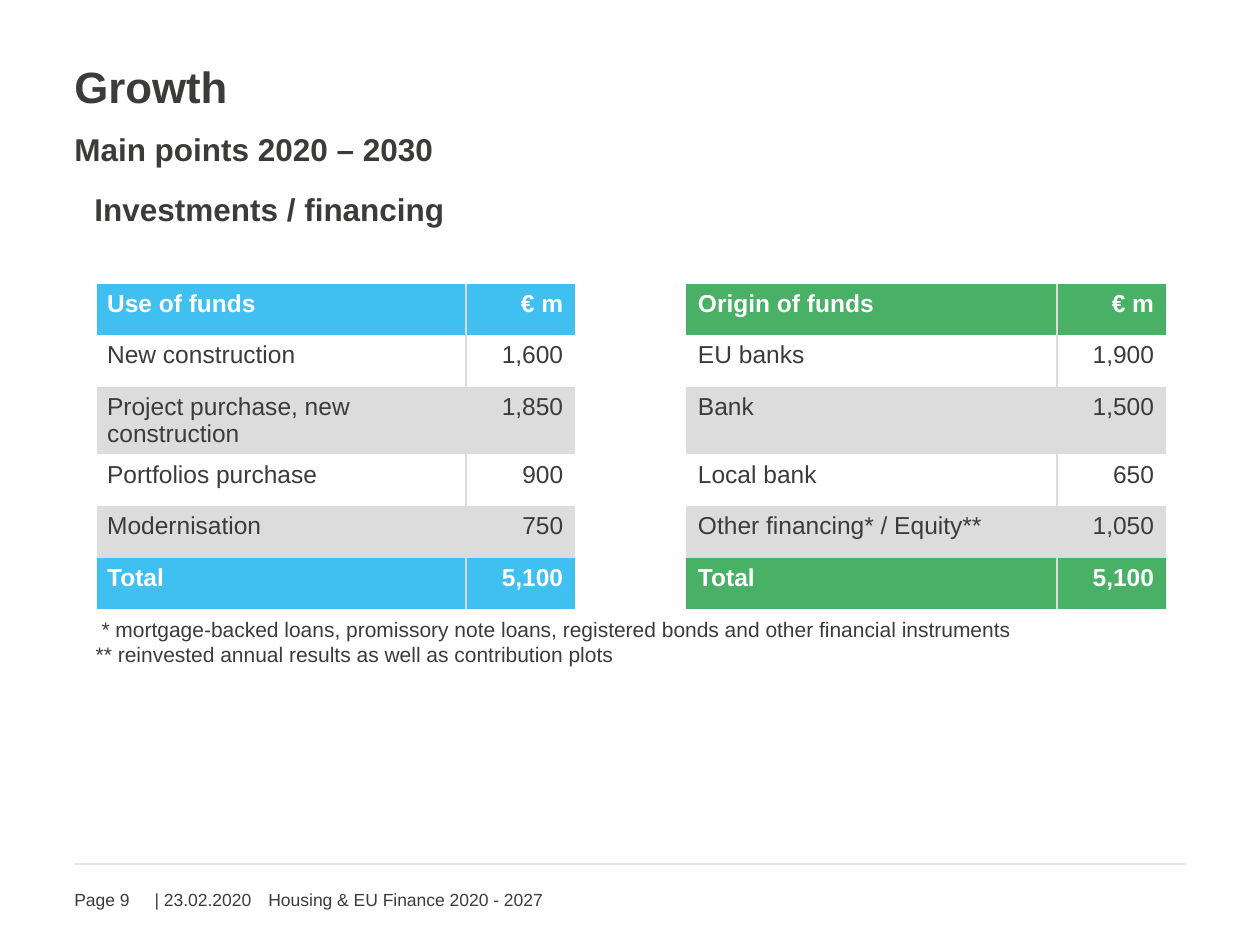
from lxml.etree import SubElement
from pptx import Presentation
from pptx.dml.color import RGBColor
from pptx.enum.shapes import MSO_CONNECTOR
from pptx.enum.text import MSO_ANCHOR, MSO_AUTO_SIZE, PP_ALIGN
from pptx.oxml.ns import qn
from pptx.util import Inches, Pt

COLORS = {
    "text": "3B3B3A",
    "white": "FFFFFF",
    "band": "DCDCDC",
    "rule": "E6E6E6",
    "use": "3FC0F0",
    "origin": "49B165",
}
FONT = "Arial"

TITLE = "Growth"
SUBTITLE = "Main points 2020 – 2030"
SECTION = "Investments / financing"
FUNDS = [
    ("Use of funds", "€ m", "", "Origin of funds", "€ m"),
    ("New construction", "1,600", "", "EU banks", "1,900"),
    ("Project purchase, new construction", "1,850", "", "Bank", "1,500"),
    ("Portfolios purchase", "900", "", "Local bank", "650"),
    ("Modernisation", "750", "", "Other financing* / Equity**", "1,050"),
    ("Total", "5,100", "", "Total", "5,100"),
]
FOOTNOTES = [
    " * mortgage-backed loans, promissory note loans, registered bonds and other financial instruments",
    "** reinvested annual results as well as contribution plots",
]
PAGE_LABEL = "Page 9"
DATE = "| 23.02.2020"
EVENT = "Housing & EU Finance 2020 - 2027"

MARGIN = 0.59
FOOTER_TOP, FOOTER_HEIGHT = 6.98, 0.24
COLUMN_WIDTHS = [2.95, 0.87, 0.87, 2.95, 0.87]
COLUMN_COLORS = ["use", "use", None, "origin", "origin"]
AMOUNT_COLUMNS = (1, 4)
GAP_COLUMN = 2
ROW_HEIGHT = 0.41


def color(name):
    return RGBColor.from_string(COLORS[name])


def write(frame, lines, size, bold=False, tint="text", align=PP_ALIGN.LEFT):
    frame.text = "\n".join(lines)
    for para in frame.paragraphs:
        para.alignment = align
        para.font.size = Pt(size)
        for span in para.runs:
            span.font.name = FONT
            span.font.size = Pt(size)
            span.font.bold = bold
            span.font.color.rgb = color(tint)


def set_frame(frame, left=0, top=0, anchor=MSO_ANCHOR.TOP):
    frame.word_wrap = True
    frame.auto_size = MSO_AUTO_SIZE.NONE
    frame.vertical_anchor = anchor
    frame.margin_left, frame.margin_top = Inches(left), Inches(top)
    frame.margin_right = frame.margin_bottom = 0


def add_text(page, place, lines, size, bold=False):
    box = page.shapes.add_textbox(*map(Inches, place))
    set_frame(box.text_frame, top=0.04)
    write(box.text_frame, lines, size, bold)


def add_footer(page, left, width, text, inset=0, align=PP_ALIGN.LEFT):
    place = (left, FOOTER_TOP, width, FOOTER_HEIGHT)
    box = page.shapes.add_textbox(*map(Inches, place))
    set_frame(box.text_frame, left=inset, anchor=MSO_ANCHOR.BOTTOM)
    write(box.text_frame, [text], 10, align=align)


def set_borders(cell, borders):
    properties = cell._tc.get_or_add_tcPr()
    for position, side in enumerate(("L", "R", "T", "B")):
        line = properties.makeelement(qn(f"a:ln{side}"), {})
        properties.insert(position, line)
        if side in borders:
            name, width = borders[side]
            line.set("w", str(Pt(width)))
            fill = SubElement(line, qn("a:solidFill"))
            SubElement(fill, qn("a:srgbClr"), val=COLORS[name])
        else:
            line.set("w", "0")
            SubElement(line, qn("a:noFill"))


def cell_borders(column):
    if column in AMOUNT_COLUMNS:
        return {"L": ("band", 1), "R": ("white", 1)}
    left = ("white", 3 if column == 0 else 1)
    return {"L": left, "R": ("white" if column == GAP_COLUMN else "band", 1)}


def add_funds_table(page):
    count = len(FUNDS)
    frame = page.shapes.add_table(
        count, len(COLUMN_WIDTHS), Inches(0.75), Inches(2.25),
        Inches(sum(COLUMN_WIDTHS)), Inches(count * ROW_HEIGHT),
    )
    table = frame.table
    table.first_row = table.horz_banding = False
    for column, width in zip(table.columns, COLUMN_WIDTHS):
        column.width = Inches(width)
    for row, values in enumerate(FUNDS):
        table.rows[row].height = Inches(ROW_HEIGHT)
        strong = row in (0, count - 1)
        for column, value in enumerate(values):
            cell = table.cell(row, column)
            fill = "white"
            if column != GAP_COLUMN:
                fill = COLUMN_COLORS[column] if strong else ("band", "white")[row % 2]
            cell.fill.solid()
            cell.fill.fore_color.rgb = color(fill)
            align = PP_ALIGN.RIGHT if column in AMOUNT_COLUMNS else PP_ALIGN.LEFT
            write(cell.text_frame, [value], 14, strong, "white" if strong else "text", align)
            set_borders(cell, cell_borders(column))


def add_footer_rule(page):
    rule = page.shapes.add_connector(
        MSO_CONNECTOR.STRAIGHT, Inches(MARGIN), Inches(6.86), Inches(10 - MARGIN), Inches(6.86)
    )
    rule.line.color.rgb = color("rule")
    rule.line.width = Pt(1)
    SubElement(rule._element.spPr, qn("a:effectLst"))


def main():
    deck = Presentation()
    deck.slide_width, deck.slide_height = Inches(10), Inches(7.5)
    page = deck.slides.add_slide(deck.slide_layouts[5])

    title = page.shapes.title
    title.left, title.top = Inches(MARGIN), Inches(0.52)
    title.width, title.height = Inches(9.41), Inches(0.39)
    set_frame(title.text_frame)
    write(title.text_frame, [TITLE], 25, bold=True)
    title.text_frame.paragraphs[0].line_spacing = 0.9

    add_footer_rule(page)
    add_footer(page, MARGIN, 0.55, PAGE_LABEL)
    add_footer(page, 1.14, 0.94, DATE, align=PP_ALIGN.CENTER)
    add_footer(page, 2.09, 4.72, EVENT, inset=0.04)
    add_text(page, (MARGIN, 0.99, 7.32, 0.39), [SUBTITLE], 18, bold=True)
    add_text(page, (0.75, 1.47, 4.33, 0.47), [SECTION], 18, bold=True)
    add_funds_table(page)
    add_text(page, (0.76, 4.85, 8.49, 0.94), FOOTNOTES, 12)
    deck.save("out.pptx")


if __name__ == "__main__":
    main()
